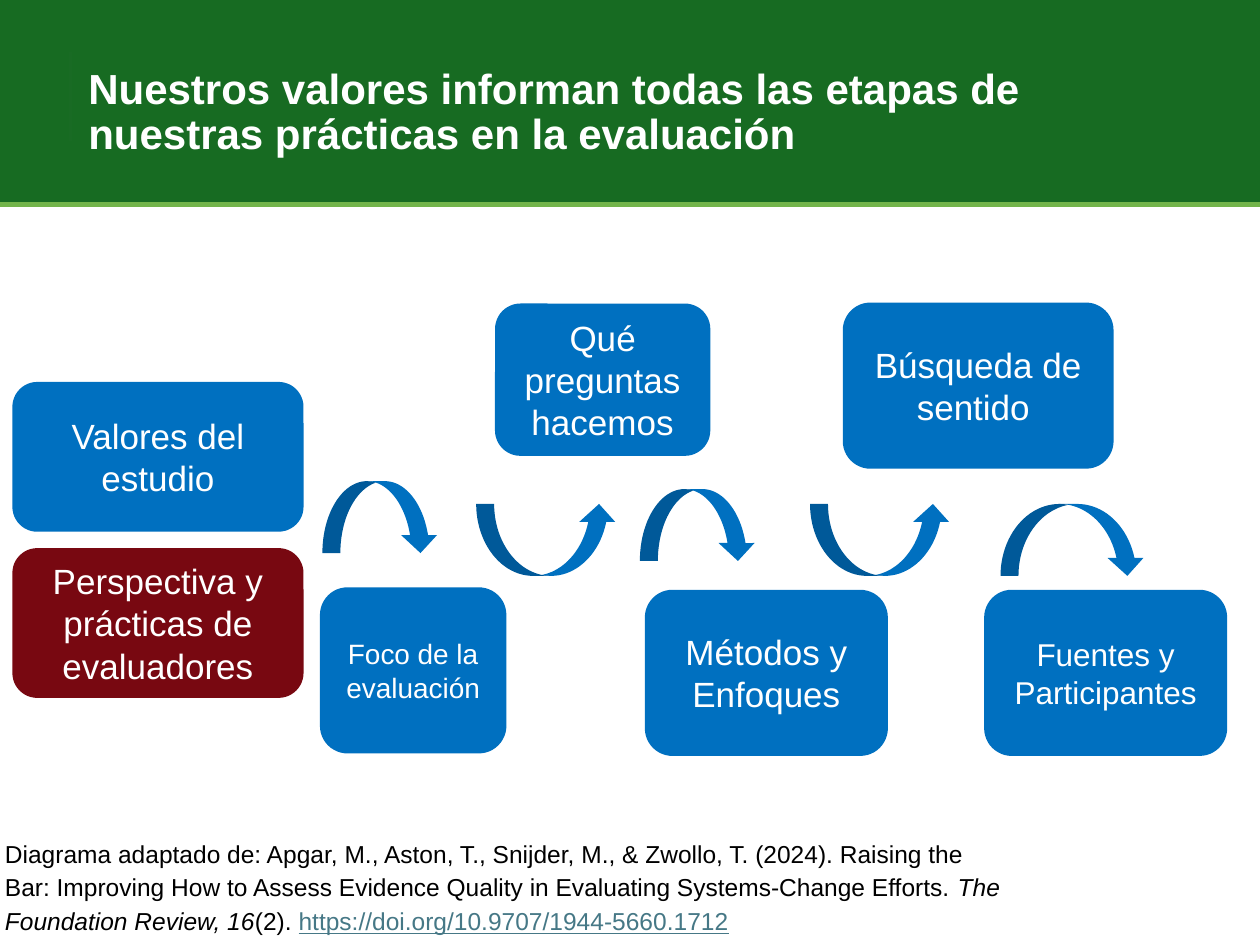
from dataclasses import dataclass

from lxml import etree
from pptx import Presentation
from pptx import util as u
from pptx.dml.color import RGBColor
from pptx.enum import shapes, text
from pptx.oxml import ns


@dataclass(frozen=True)
class Theme:
    face: str = "Arial"
    green: str = "176B22"
    rule: str = "73B54B"
    mark: str = "196B24"
    blue: str = "0070C0"
    wine: str = "780811"
    white: str = "FFFFFF"
    black: str = "000000"
    link: str = "467886"
    head: int = 24
    large: int = 20
    mid: int = 18
    small: int = 16
    note: int = 14


KIND = shapes.MSO_SHAPE
ALIGN = text.PP_ALIGN


def put(obj, values):
    for name, value in values.items():
        setattr(obj, name, value)


class Deck:
    def __init__(self, theme):
        self.theme = theme
        self.file = Presentation()
        put(self.file, {"slide_width": u.Cm(25.4), "slide_height": u.Cm(19.05)})
        self.slide = self.file.slides.add_slide(self.file.slide_layouts[5])

    def frame(self, shape, inset=0.25, anchor=text.MSO_ANCHOR.MIDDLE):
        side, edge = u.Cm(inset), u.Cm(0.13)
        put(shape.text_frame, {
            "word_wrap": True, "auto_size": text.MSO_AUTO_SIZE.NONE,
            "vertical_anchor": anchor,
            "margin_left": side, "margin_right": side,
            "margin_top": edge, "margin_bottom": edge})
        return shape.text_frame.paragraphs[0]

    def run(self, para, words, size, color, **style):
        run = para.add_run()
        run.text = words
        put(run.font, {"name": self.theme.face, "size": u.Pt(size), **style})
        run.font.color.rgb = RGBColor.from_string(color)

    def shape(self, kind, spot, color):
        shape = self.slide.shapes.add_shape(kind, *map(u.Cm, spot))
        shape.shadow.inherit = False
        shape.fill.solid()
        shape.fill.fore_color.rgb = RGBColor.from_string(color)
        shape.line.fill.background()
        return shape

    def line(self, ends, color, width):
        line = self.slide.shapes.add_connector(
            shapes.MSO_CONNECTOR.STRAIGHT, *map(u.Cm, ends))
        line.line.color.rgb = RGBColor.from_string(color)
        line.line.width = u.Pt(width)
        etree.SubElement(line._element.spPr, ns.qn("a:effectLst"))

    def title(self, words, spot):
        title = self.slide.shapes.title
        sides = ("left", "top", "width", "height")
        put(title, dict(zip(sides, map(u.Cm, spot))))
        para = self.frame(title, 0.13)
        put(para, {"alignment": ALIGN.LEFT, "line_spacing": 0.9})
        self.run(para, words, self.theme.head, self.theme.white, bold=True)
        title._element.getparent().append(title._element)

    def box(self, words, spot, size, color):
        box = self.shape(KIND.FLOWCHART_ALTERNATE_PROCESS, spot, color)
        para = self.frame(box)
        para.alignment = ALIGN.CENTER
        self.run(para, words, size, self.theme.white)

    def note(self, parts, spot):
        box = self.slide.shapes.add_textbox(*map(u.Cm, spot))
        para = self.frame(box, anchor=text.MSO_ANCHOR.TOP)
        para.line_spacing = 1.15
        for words, color, style in parts:
            self.run(para, words, self.theme.note, color, **style)


def main():
    theme = Theme()
    deck = Deck(theme)

    deck.shape(KIND.RECTANGLE, (0, 0, 25.4, 4.14), theme.green)
    deck.line((0, 4.12, 25.4, 4.12), theme.rule, 3)
    deck.title("Nuestros valores informan todas las etapas de "
               "nuestras prácticas en la evaluación", (1.65, 1.14, 21, 2.29))
    deck.line((1.42, 1.04, 1.42, 2.84), theme.mark, 2)

    starts = (
        ("Valores del estudio", 7.7, theme.blue),
        ("Perspectiva y prácticas de evaluadores", 11.05, theme.wine),
    )
    for words, top, color in starts:
        deck.box(words, (0.25, top, 5.87, 3.02), theme.large, color)

    steps = (
        ("Foco de la evaluación", (6.45, 11.84, 3.76, 3.35), theme.small),
        ("Qué preguntas hacemos", (9.98, 6.12, 4.34, 3.07), theme.large),
        ("Métodos y Enfoques", (13, 11.89, 4.9, 3.35), theme.large),
        ("Búsqueda de sentido ", (16.99, 6.1, 5.46, 3.35), theme.large),
        ("Fuentes y Participantes", (19.84, 11.89, 4.9, 3.35), theme.mid),
    )
    for words, spot, size in steps:
        deck.box(words, spot, size, theme.blue)

    down, up = KIND.CURVED_DOWN_ARROW, KIND.CURVED_UP_ARROW
    curves = (
        (down, 6.5, 9.7, 2.34),
        (up, 9.6, 10.16, 2.84),
        (down, 12.9, 9.86, 2.34),
        (up, 16.33, 10.16, 2.84),
        (down, 20.17, 10.16, 2.92),
    )
    for kind, left, top, width in curves:
        deck.shape(kind, (left, top, width, 1.45), theme.blue)

    deck.note((
        ("Diagrama adaptado de: Apgar, M., Aston, T., Snijder, M., & Zwollo, T. "
         "(2024). Raising the Bar: Improving How to Assess Evidence Quality in "
         "Evaluating Systems-Change Efforts. ", theme.black, {}),
        ("The Foundation Review, 16", theme.black, {"italic": True}),
        ("(2). ", theme.black, {}),
        ("https://doi.org/10.9707/1944-5660.1712", theme.link,
         {"underline": True}),
    ), (-0.15, 16.69, 20.75, 2.31))

    deck.file.save("out.pptx")


if __name__ == "__main__":
    main()
